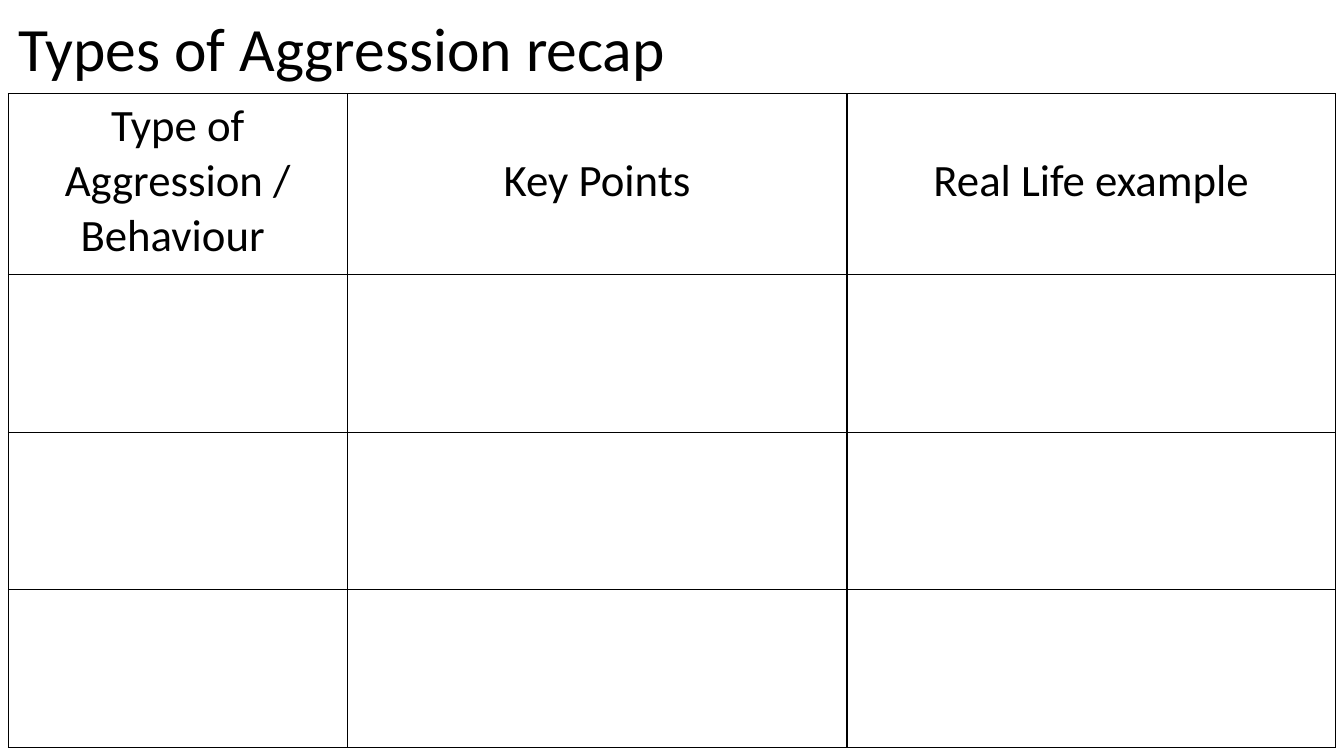
from lxml.etree import SubElement
from pptx import Presentation
from pptx.dml.color import RGBColor
from pptx.enum.text import MSO_ANCHOR, PP_ALIGN
from pptx.oxml.ns import qn
from pptx.util import Pt

# Content
TITLE = "Types of Aggression recap"
HEADS = ["Type of Aggression / Behaviour ", "Key Points", "Real Life example"]
WIDTHS = [242, 357, 349]
HEIGHTS = [129] + [112.7] * 3
LEFT, TOP = 6, 67
INK = "000000"
FONT = "Calibri"


def color(code):
    return RGBColor.from_string(code)


def style(para, size, align):
    para.alignment = align
    para.font.name = FONT
    para.font.size = Pt(size)
    para.font.color.rgb = color(INK)


def border(cell):
    props = cell._tc.get_or_add_tcPr()
    for side in ("lnL", "lnR", "lnT", "lnB"):
        line = SubElement(props, qn("a:" + side), w=str(Pt(1)))
        fill = SubElement(line, qn("a:solidFill"))
        SubElement(fill, qn("a:srgbClr"), val=INK)


def main():
    deck = Presentation()
    deck.slide_width, deck.slide_height = Pt(960), Pt(540)
    slide = deck.slides.add_slide(deck.slide_layouts[5])

    # Title
    title = slide.shapes.title
    title.left, title.top = Pt(LEFT), Pt(6.5)
    title.width, title.height = Pt(828), Pt(60.5)
    title.text_frame.text = TITLE
    title.text_frame.vertical_anchor = MSO_ANCHOR.MIDDLE
    para = title.text_frame.paragraphs[0]
    style(para, 44, PP_ALIGN.LEFT)
    para.line_spacing = 0.9

    # Table grid
    frame = slide.shapes.add_table(
        len(HEIGHTS), len(WIDTHS), Pt(LEFT), Pt(TOP),
        Pt(sum(WIDTHS)), Pt(sum(HEIGHTS)))
    table = frame.table
    table.first_row = table.horz_banding = False
    for col, width in zip(table.columns, WIDTHS):
        col.width = Pt(width)
    for row, height in zip(table.rows, HEIGHTS):
        row.height = Pt(height)
    for cell in table.iter_cells():
        border(cell)
        cell.fill.background()

    # Header row
    for cell, head in zip(table.rows[0].cells, HEADS):
        cell.text = head
        cell.vertical_anchor = MSO_ANCHOR.MIDDLE
        cell.margin_bottom = Pt(8)
        style(cell.text_frame.paragraphs[0], 32, PP_ALIGN.CENTER)

    deck.save("out.pptx")


if __name__ == "__main__":
    main()
